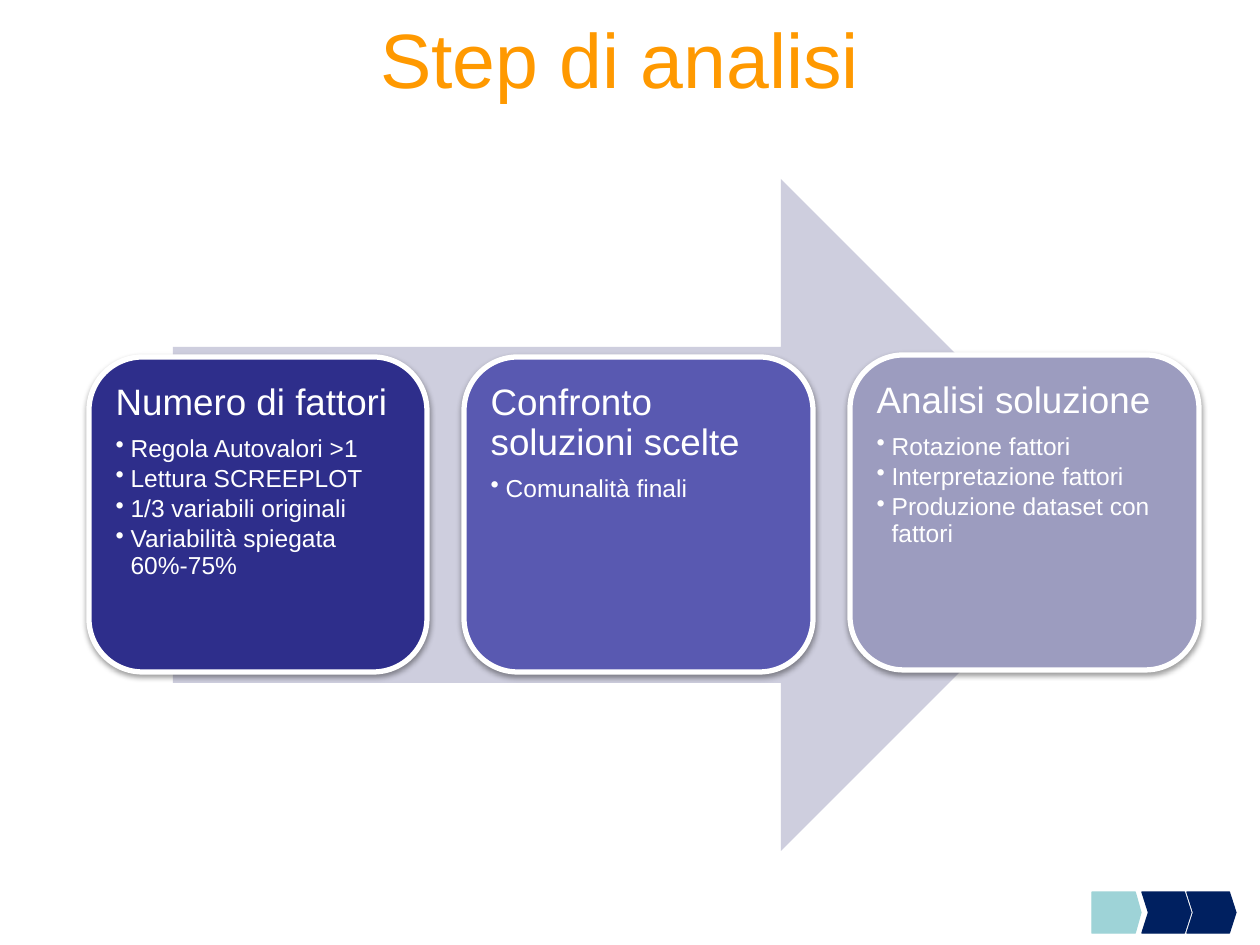
import pptx
import pptx.util
import pptx.dml.color
import pptx.enum.shapes
import pptx.enum.text
import pptx.oxml
import pptx.oxml.ns
from dataclasses import dataclass

PX = 914400 / 126  # EMU per px
SHAPE = pptx.enum.shapes.MSO_SHAPE
ALIGN = pptx.enum.text.PP_ALIGN
ANCHOR = pptx.enum.text.MSO_ANCHOR


@dataclass(frozen=True)
class Theme:
    font: str = "Arial"
    title: str = "FF9900"
    text: str = "FFFFFF"
    arrow: str = "CECEDE"
    navy: str = "002060"
    aqua: str = "9ED3D7"
    steps: tuple = ("2E2E8B", "5959B1", "9C9CBF")
    title_pt: int = 44
    heading_pt: int = 21
    bullet_pt: int = 14


theme = Theme()


def add_shape(kind, box, fill, line=None, line_pt=0.75, adj=None):
    """Add a filled shape without shadow; box is left, top, width, height in px."""
    s = slide.shapes.add_shape(kind, *(round(v * PX) for v in box))
    s.shadow.inherit = False
    s.fill.solid()
    s.fill.fore_color.rgb = pptx.dml.color.RGBColor.from_string(fill)
    if line:
        s.line.color.rgb = pptx.dml.color.RGBColor.from_string(line)
        s.line.width = pptx.util.Pt(line_pt)
    else:
        s.line.fill.background()
    if adj is not None:
        s.adjustments[0] = adj
    return s


def write(p, text, size, color):
    p.text = text
    p.font.name = theme.font
    p.font.size = pptx.util.Pt(size)
    p.font.color.rgb = pptx.dml.color.RGBColor.from_string(color)


prs = pptx.Presentation()
prs.slide_width = pptx.util.Inches(10)
prs.slide_height = pptx.util.Inches(7.5)
slide = prs.slides.add_slide(prs.slide_layouts[6])

# Title
title = slide.shapes.add_textbox(*(round(v * PX) for v in (53, -21, 1134, 158)))
tf = title.text_frame
tf.word_wrap = True
tf.vertical_anchor = ANCHOR.MIDDLE
tf.paragraphs[0].alignment = ALIGN.CENTER
write(tf.paragraphs[0], "Step di analisi", theme.title_pt, theme.title)

# Progress marker in the corner
for kind, left, color, adj in (
    (SHAPE.CHEVRON, 1187, theme.navy, 0.16),
    (SHAPE.PENTAGON, 1092, theme.aqua, 0.14),
    (SHAPE.CHEVRON, 1142, theme.navy, 0.16),
):
    add_shape(kind, (left, 892, 49, 41), color, line=color, adj=adj)

# Process arrow with its three steps
add_shape(SHAPE.RIGHT_ARROW, (173, 179, 944, 672), theme.arrow)

steps = (
    ((89, 357, 338, 315), "Numero di fattori",
     ("Regola Autovalori >1", "Lettura SCREEPLOT", "1/3 variabili originali",
      "Variabilità spiegata 60%-75%")),
    ((464, 357, 349, 315), "Confronto soluzioni scelte", ("Comunalità finali",)),
    ((850, 355, 349, 315), "Analisi soluzione",
     ("Rotazione fattori", "Interpretazione fattori", "Produzione dataset con fattori")),
)
SHADOW = (
    f'<a:outerShdw {pptx.oxml.ns.nsdecls("a")} blurRad="40000" dist="20000" dir="5400000" '
    'rotWithShape="0"><a:srgbClr val="000000"><a:alpha val="38000"/></a:srgbClr></a:outerShdw>'
)
BULLET = f'<a:buChar {pptx.oxml.ns.nsdecls("a")} char="•"/>'
INDENT = round(15 * PX)

for (box, heading, bullets), color in zip(steps, theme.steps):
    s = add_shape(SHAPE.ROUNDED_RECTANGLE, box, color, line=theme.text, line_pt=3, adj=0.17)
    effects = s._element.spPr.find(pptx.oxml.ns.qn("a:effectLst"))
    effects.append(pptx.oxml.parse_xml(SHADOW))
    tf = s.text_frame
    tf.word_wrap = True
    tf.vertical_anchor = ANCHOR.TOP
    tf.margin_left = tf.margin_top = tf.margin_right = tf.margin_bottom = round(11 * PX)

    p = tf.paragraphs[0]
    write(p, heading, theme.heading_pt, theme.text)
    p.space_after = pptx.util.Pt(7.35)
    for bullet in bullets:
        p = tf.add_paragraph()
        write(p, bullet, theme.bullet_pt, theme.text)
        p.level = 1
        p.space_after = pptx.util.Pt(2.1)
        pPr = p._p.get_or_add_pPr()
        pPr.set("marL", str(INDENT))
        pPr.set("indent", str(-INDENT))
        pPr.insert_element_before(pptx.oxml.parse_xml(BULLET), "a:tabLst", "a:defRPr", "a:extLst")
    for p in tf.paragraphs:
        p.alignment = ALIGN.LEFT
        p.line_spacing = 0.9

prs.save("out.pptx")
